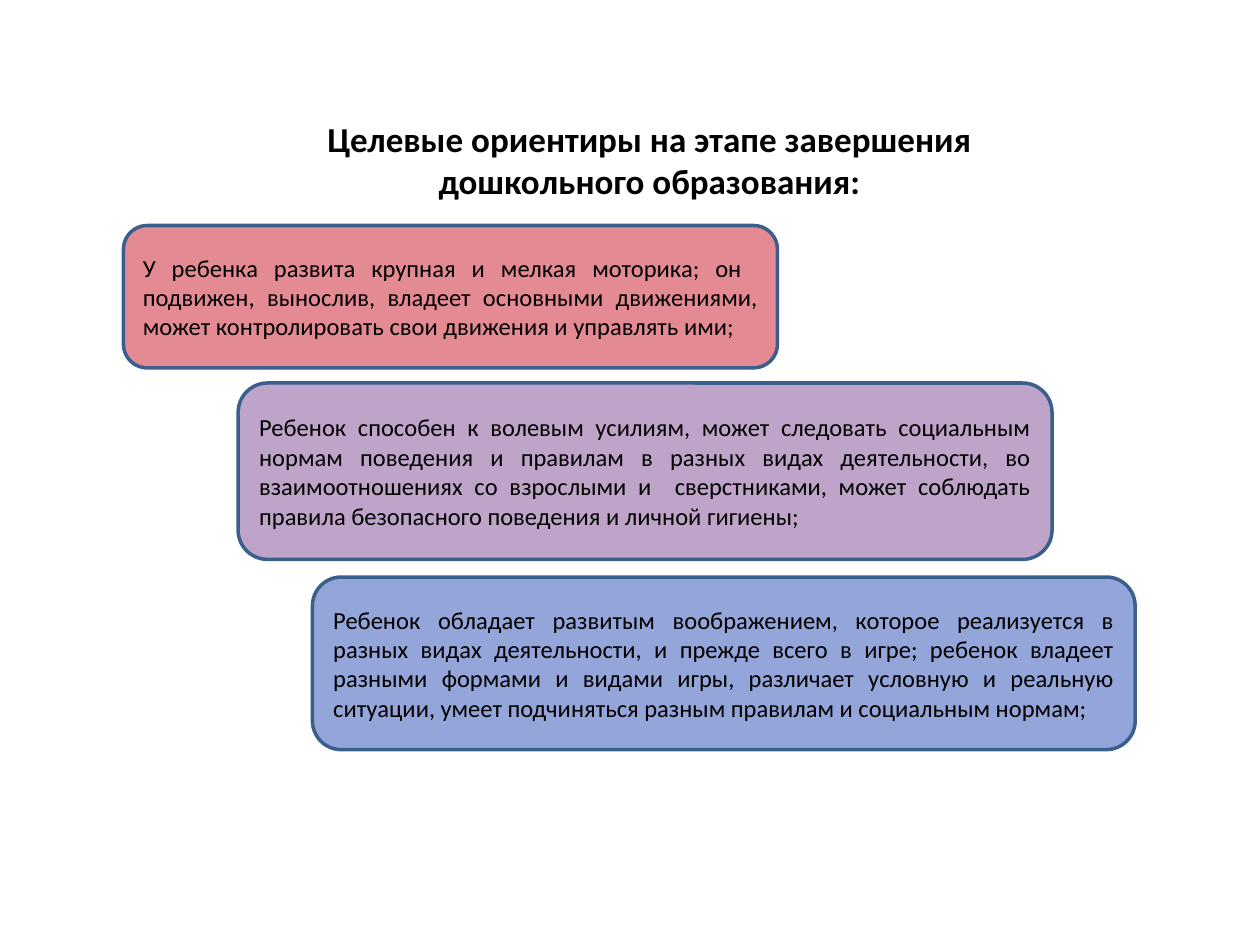
from pptx import Presentation
from pptx.dml.color import RGBColor
from pptx.enum.shapes import MSO_SHAPE
from pptx.enum.text import MSO_ANCHOR, MSO_AUTO_SIZE, PP_ALIGN
from pptx.util import Inches, Pt

ROUNDED = MSO_SHAPE.ROUNDED_RECTANGLE
MIDDLE, BOTTOM = MSO_ANCHOR.MIDDLE, MSO_ANCHOR.BOTTOM
CENTER, JUSTIFY = PP_ALIGN.CENTER, PP_ALIGN.JUSTIFY
NO_AUTOFIT = MSO_AUTO_SIZE.NONE

COLORS = {
    "text": "000000",
    "outline": "3A5F8C",
    "pink": "E48A93",
    "violet": "BFA4CA",
    "blue": "94A5DA",
}

GOALS = [
    (0.98, 1.79, 5.19, 1.13, "pink",
     "У ребенка развита крупная и мелкая моторика; он  подвижен, вынослив, "
     "владеет основными движениями, может контролировать свои движения и "
     "управлять ими;"),
    (1.89, 3.04, 6.46, 1.4, "violet",
     "Ребенок способен к волевым усилиям, может следовать социальным нормам "
     "поведения и правилам в разных видах деятельности, во взаимоотношениях "
     "со взрослыми и  сверстниками, может соблюдать правила безопасного "
     "поведения и личной гигиены;"),
    (2.48, 4.58, 6.53, 1.37, "blue",
     "Ребенок обладает развитым воображением, которое реализуется в разных "
     "видах деятельности, и прежде всего в игре; ребенок владеет разными "
     "формами и видами игры, различает условную и реальную ситуации, умеет "
     "подчиняться разным правилам и социальным нормам;"),
]


def color(name):
    return RGBColor.from_string(COLORS[name])


def write(shape, text, size, bold, align, anchor):
    frame = shape.text_frame
    frame.word_wrap = True
    frame.auto_size = NO_AUTOFIT
    frame.vertical_anchor = anchor
    para = frame.paragraphs[0]
    para.text = text
    para.alignment = align
    para.font.name = "Calibri"
    para.font.size = Pt(size)
    para.font.bold = bold
    para.font.color.rgb = color("text")


deck = Presentation()
deck.slide_width, deck.slide_height = Inches(10), Inches(7.5)
page = deck.slides.add_slide(deck.slide_layouts[5])

title = page.shapes.title
title.left, title.top = Inches(1.69), Inches(1.02)
title.width, title.height = Inches(6.93), Inches(0.63)
write(title, "Целевые ориентиры на этапе завершения дошкольного образования:",
      20, True, CENTER, BOTTOM)

for left, top, width, height, fill, text in GOALS:
    box = page.shapes.add_shape(
        ROUNDED, Inches(left), Inches(top), Inches(width), Inches(height))
    box.shadow.inherit = False
    box.fill.solid()
    box.fill.fore_color.rgb = color(fill)
    box.line.color.rgb = color("outline")
    box.line.width = Pt(2)
    write(box, text, 14, False, JUSTIFY, MIDDLE)

deck.save("out.pptx")
